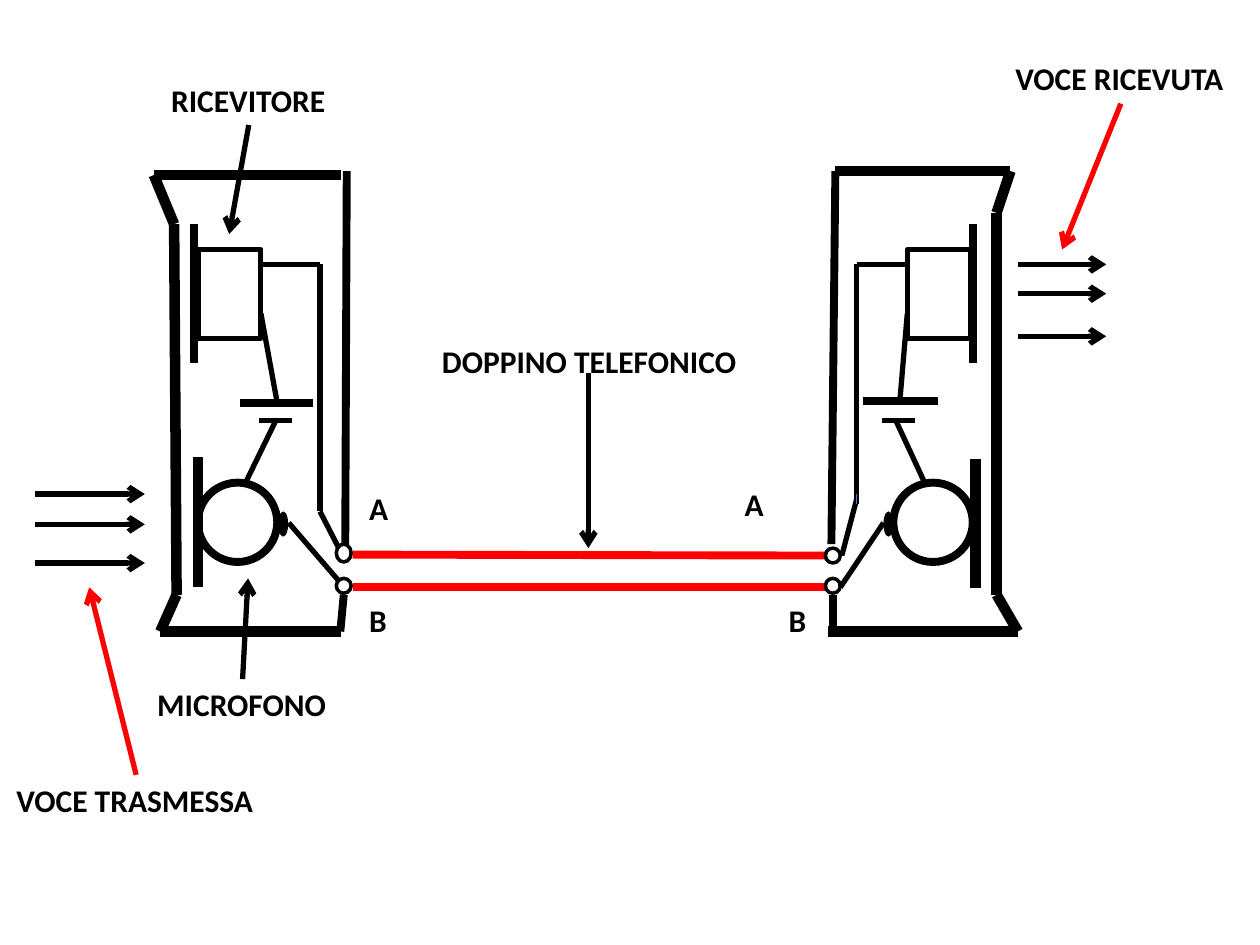
from pptx import Presentation
from pptx.dml.color import RGBColor
from pptx.enum.shapes import MSO_CONNECTOR, MSO_SHAPE
from pptx.enum.text import MSO_AUTO_SIZE
from pptx.oxml.ns import qn
from pptx.util import Cm, Pt
from lxml import etree

STRAIGHT = MSO_CONNECTOR.STRAIGHT
RECTANGLE = MSO_SHAPE.RECTANGLE
CIRCLE = MSO_SHAPE.FLOWCHART_CONNECTOR
FIT_SHAPE = MSO_AUTO_SIZE.SHAPE_TO_FIT_TEXT
TOP, BOTTOM = 0, 2
COLORS = {"black": "000000", "red": "FF0000", "blue": "4B7EBC"}

presentation = Presentation()
presentation.slide_width, presentation.slide_height = Cm(25.4), Cm(19.05)
slide = presentation.slides.add_slide(presentation.slide_layouts[6])


def add_line(ends, width, color="black", arrow=False):
    connector = slide.shapes.add_connector(STRAIGHT, *[Cm(value) for value in ends])
    connector.line.width = Pt(width)
    connector.line.color.rgb = RGBColor.from_string(COLORS[color])
    if arrow:
        line = connector.line._get_or_add_ln()
        etree.SubElement(line, qn("a:tailEnd"), type="arrow")
    etree.SubElement(connector._element.spPr, qn("a:effectLst"))
    return connector


def add_outline(kind, box, width):
    """Add an unfilled shape, or a solid black one when width is 0."""
    shape = slide.shapes.add_shape(kind, *[Cm(value) for value in box])
    shape.shadow.inherit = False
    black = RGBColor.from_string(COLORS["black"])
    if width:
        shape.fill.background()
        shape.line.width = Pt(width)
        shape.line.color.rgb = black
    else:
        shape.fill.solid()
        shape.fill.fore_color.rgb = black
        shape.line.fill.background()


# Receivers, microphones and their contacts, one per handset
for receiver_left, microphone_left, contact_left in [(3.99, 3.99, 5.61), (18.29, 18.01, 17.81)]:
    add_outline(RECTANGLE, (receiver_left, 5.03, 1.27, 1.8), 3)
    add_outline(CIRCLE, (microphone_left, 9.73, 1.6, 1.6), 4.5)
    add_outline(CIRCLE, (contact_left, 10.31, 0.2, 0.51), 0)

# Telephone pair between the handsets
add_line((7.11, 11.18, 16.64, 11.2), 4.5, "red")
add_line((7.11, 11.84, 16.64, 11.84), 4.5, "red")

# Terminals A and B
for left, top, height in [
    (6.78, 10.97, 0.36), (6.78, 11.66, 0.3), (16.64, 11.05, 0.3), (16.64, 11.66, 0.3),
]:
    add_outline(CIRCLE, (left, top, 0.3, height), 2)

# Handset cases, membranes, batteries and wiring, by line width
lines_by_width = {
    6: [
        # left case and microphone membrane
        (3.1, 3.53, 6.88, 3.53), (3.1, 3.53, 3.51, 4.52), (3.51, 4.52, 3.56, 11.99),
        (3.23, 12.73, 3.56, 11.99), (3.23, 12.73, 6.88, 12.73), (3.99, 9.22, 3.99, 11.84),
        # right case and microphone membrane
        (16.84, 3.45, 20.37, 3.45), (20.37, 3.45, 20.09, 4.29), (20.09, 4.29, 20.09, 11.99),
        (20.09, 11.99, 20.52, 12.73), (16.69, 12.73, 20.52, 12.73), (19.66, 9.25, 19.66, 11.86),
    ],
    4.5: [
        # left receiver membrane, battery plate and inner case side
        (3.91, 4.52, 3.91, 7.32), (4.83, 8.13, 6.3, 8.13),
        (6.99, 3.45, 6.96, 10.97), (6.93, 11.99, 6.86, 12.73),
        # right receiver membrane, battery plate and inner case side
        (19.61, 4.52, 19.61, 7.32), (17.4, 8.08, 18.9, 8.08),
        (16.84, 3.45, 16.76, 10.97), (16.79, 11.99, 16.79, 12.73),
    ],
    3: [
        # left wiring
        (5.26, 5.33, 6.45, 5.33), (6.45, 5.33, 6.45, 10.31), (6.45, 10.31, 6.83, 11.05),
        (5.26, 6.32, 5.59, 8.13), (5.23, 8.48, 5.89, 8.48), (4.95, 9.73, 5.56, 8.48),
        (5.82, 10.54, 6.83, 11.71),
        # right wiring
        (17.27, 5.33, 18.29, 5.33), (17.27, 5.33, 17.27, 10.16), (17.27, 10.06, 16.97, 11.2),
        (18.29, 6.32, 18.14, 8.08), (17.78, 8.48, 18.44, 8.48), (18.06, 8.48, 18.64, 9.73),
        (17.81, 10.54, 16.94, 11.84),
    ],
}
for width, lines in lines_by_width.items():
    for ends in lines:
        add_line(ends, width)
add_line((17.27, 10.16, 17.27, 9.96), 0.75, "blue")

# Sound arrows: voice in on the left, voice out on the right
for start, end, heights in [(0.71, 2.92, (9.96, 10.57, 11.35)), (20.52, 22.3, (5.33, 5.92, 6.78))]:
    for y in heights:
        add_line((start, y, end, y), 3, arrow=True)

# Labels
labels = {}
for text, left, top, width in [
    ("A", 7.19, 9.73, 0.89),
    ("A", 14.76, 9.65, 0.89),
    ("B", 7.19, 11.99, 0.71),
    ("B", 15.65, 11.99, 0.86),
    ("DOPPINO TELEFONICO", 8.66, 6.78, 6.5),
    ("MICROFONO", 2.92, 13.69, 3.94),
    ("RICEVITORE", 3.2, 1.5, 3.63),
    ("VOCE TRASMESSA", 0.08, 15.62, 5.33),
    ("VOCE RICEVUTA", 20.22, 1.07, 4.75),
]:
    label = slide.shapes.add_textbox(Cm(left), Cm(top), Cm(width), Cm(1.02))
    label.text_frame.word_wrap = False
    label.text_frame.auto_size = FIT_SHAPE
    paragraph = label.text_frame.paragraphs[0]
    paragraph.text = text
    paragraph.font.name = "Calibri"
    paragraph.font.size = Pt(18)
    paragraph.font.bold = True
    paragraph.font.color.rgb = RGBColor.from_string(COLORS["black"])
    labels[text] = label

# Arrows from the labels to the parts they name
add_line((11.86, 7.52, 11.86, 11.05), 3, arrow=True)
for text, side, start, tip, color in [
    ("MICROFONO", TOP, (4.89, 13.69), (5, 11.66), "black"),
    ("RICEVITORE", BOTTOM, (5.02, 2.52), (4.62, 4.72), "black"),
    ("VOCE TRASMESSA", TOP, (2.75, 15.62), (1.8, 11.84), "red"),
    ("VOCE RICEVUTA", BOTTOM, (22.6, 2.09), (21.41, 5.03), "red"),
]:
    pointer = add_line((*start, *tip), 3, color, arrow=True)
    pointer.begin_connect(labels[text], side)

presentation.save("out.pptx")
